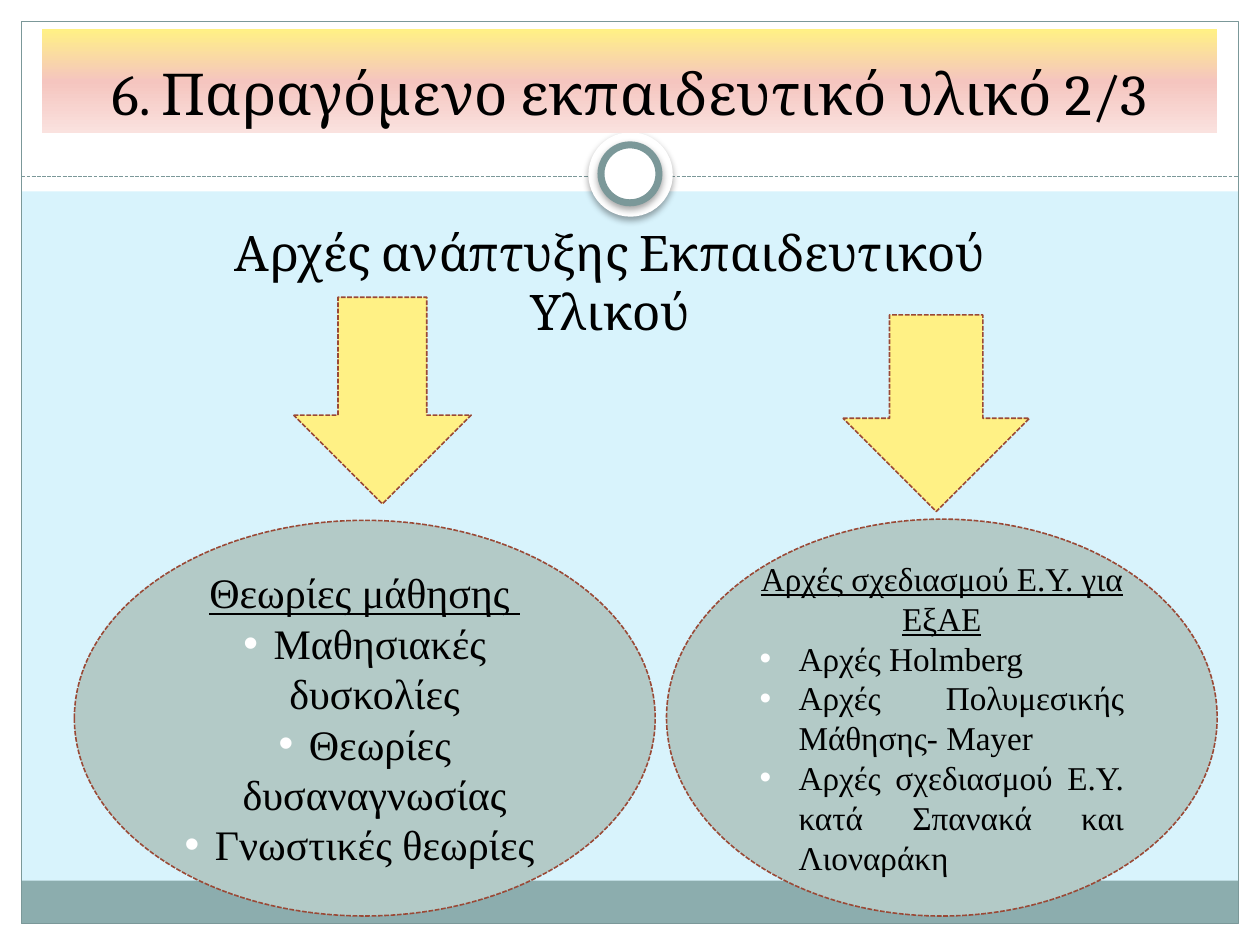
from dataclasses import dataclass

from lxml.etree import SubElement
from pptx import Presentation
from pptx.dml.color import RGBColor
from pptx.enum.dml import MSO_LINE
from pptx.enum.shapes import MSO_CONNECTOR, MSO_SHAPE
from pptx.enum.text import MSO_ANCHOR, MSO_AUTO_SIZE, PP_ALIGN
from pptx.oxml.ns import qn
from pptx.util import Inches, Pt


@dataclass(frozen=True)
class Theme:
    sky: str = "D8F3FC"
    white: str = "FFFFFF"
    black: str = "000000"
    band: str = "8CADAE"
    teal: str = "7B9899"
    yellow: str = "FFF185"
    rust: str = "9A4936"
    sage: str = "B3CAC7"
    fade: tuple = ((0, "FFF185"), (50, "F5C5BF"), (100, "FAE2DF"))
    head: str = "Cambria"
    body: str = "Times New Roman"
    title: int = 33
    lead: int = 28
    large: int = 24
    small: int = 19


class Board:
    """Holds the theme and the current slide."""

    def __init__(self, theme, slide):
        self.theme = theme
        self.slide = slide
        fill = slide.background.fill
        fill.solid()
        fill.fore_color.rgb = RGBColor.from_string(theme.sky)

    def place(self, shape, box):
        shape.left, shape.top, shape.width, shape.height = map(Inches, box)

    def stroke(self, line, color, width, dash=False):
        line.color.rgb = RGBColor.from_string(color)
        line.width = Pt(width)
        if dash:
            line.dash_style = MSO_LINE.SQUARE_DOT

    def shape(self, kind, box, fill=None, line=None, width=0.75, dash=False):
        item = self.slide.shapes.add_shape(kind, *map(Inches, box))
        item.shadow.inherit = False
        if fill:
            item.fill.solid()
            item.fill.fore_color.rgb = RGBColor.from_string(fill)
        else:
            item.fill.background()
        if line:
            self.stroke(item.line, line, width, dash)
        else:
            item.line.fill.background()
        return item

    def rule(self, start, end, color):
        line = self.slide.shapes.add_connector(
            MSO_CONNECTOR.STRAIGHT, *map(Inches, start + end))
        self.stroke(line.line, color, 0.75, True)
        SubElement(line.element.spPr, qn("a:effectLst"))

    def ring(self, box, line=None):
        ring = self.shape(MSO_SHAPE.OVAL, box, self.theme.white, line, 4)
        effect = ring.element.spPr.find(qn("a:effectLst"))
        shade = SubElement(effect, qn("a:outerShdw"), blurRad=str(Pt(4)),
                           dist=str(Pt(2)), dir="5400000", rotWithShape="0")
        color = SubElement(shade, qn("a:srgbClr"), val=self.theme.black)
        SubElement(color, qn("a:alpha"), val="35000")

    def style(self, para, face, size, align=PP_ALIGN.CENTER):
        para.alignment = align
        for run in para.runs:
            run.font.name = face
            run.font.size = Pt(size)
            run.font.color.rgb = RGBColor.from_string(self.theme.black)

    def bullet(self, para, indent):
        props = para._p.get_or_add_pPr()
        props.set("marL", str(Inches(indent)))
        props.set("indent", str(-Inches(indent)))
        color = SubElement(props, qn("a:buClr"))
        SubElement(color, qn("a:srgbClr"), val=self.theme.white)
        SubElement(props, qn("a:buFont"), typeface="Arial")
        SubElement(props, qn("a:buChar"), char="•")

    def title(self, text, box):
        title = self.slide.shapes.title
        title.element.getparent().append(title.element)  # above the backdrop
        self.place(title, box)
        title.fill.gradient()
        title.fill.gradient_angle = 270
        stops = title.element.spPr.find(".//" + qn("a:gsLst"))
        stops.clear()
        for pos, color in self.theme.fade:
            stop = SubElement(stops, qn("a:gs"), pos=str(pos * 1000))
            SubElement(stop, qn("a:srgbClr"), val=color)
        frame = title.text_frame
        frame.text = text
        frame.auto_size = MSO_AUTO_SIZE.NONE
        frame.vertical_anchor = MSO_ANCHOR.BOTTOM
        self.style(frame.paragraphs[0], self.theme.head, self.theme.title)

    def label(self, text, box):
        frame = self.slide.shapes.add_textbox(*map(Inches, box)).text_frame
        frame.word_wrap = True
        frame.text = text
        self.style(frame.paragraphs[0], self.theme.head, self.theme.lead)

    def arrow(self, box):
        self.shape(MSO_SHAPE.DOWN_ARROW, box, self.theme.yellow,
                   self.theme.rust, 0.9, True)

    def bubble(self, box, head, items, size, indent, align):
        oval = self.shape(MSO_SHAPE.OVAL, box, self.theme.sage,
                          self.theme.rust, 0.9, True)
        frame = oval.text_frame
        frame.word_wrap = True
        frame.vertical_anchor = MSO_ANCHOR.MIDDLE
        frame.text = "\n".join([head, *items])
        top, *rest = frame.paragraphs
        self.style(top, self.theme.body, size)
        top.runs[0].font.underline = True
        for para in rest:
            self.style(para, self.theme.body, size, align)
            self.bullet(para, indent)


def main():
    deck = Presentation()
    deck.slide_width, deck.slide_height = Inches(10), Inches(7.5)
    theme = Theme()
    board = Board(theme, deck.slides.add_slide(deck.slide_layouts[5]))

    # White margins, bottom band and frame
    edge = 0.17
    for box in ((0, 7.5 - edge, 10, edge), (0, 0, 10, 1.52),
                (0, 0, edge, 7.5), (10 - edge, 0, edge, 7.5)):
        board.shape(MSO_SHAPE.RECTANGLE, box, theme.white)
    board.shape(MSO_SHAPE.RECTANGLE, (edge, 6.99, 9.66, 0.34), theme.band)
    board.shape(MSO_SHAPE.RECTANGLE, (edge, edge, 9.66, 7.16),
                line=theme.teal)

    # Dashed rule with the ring on it
    board.rule((edge, 1.4), (10 - edge, 1.4), theme.teal)
    board.ring((4.67, 1.05, 0.67, 0.67))
    board.ring((4.77, 1.15, 0.46, 0.46), theme.teal)

    # Headings
    board.title("6. Παραγόμενο εκπαιδευτικό υλικό 2/3",
                (0.33, 0.23, 9.33, 0.83))
    board.label("Αρχές ανάπτυξης Εκπαιδευτικού Υλικού",
                (1.17, 1.72, 7.34, 0.56))

    # Arrows down to the two groups of principles
    board.arrow((2.33, 2.36, 1.41, 1.64))
    board.arrow((6.69, 2.5, 1.48, 1.56))
    board.bubble((0.59, 4.13, 4.61, 3.14), "Θεωρίες μάθησης ",
                 ["Μαθησιακές δυσκολίες ", "Θεωρίες δυσαναγνωσίας ",
                  "Γνωστικές θεωρίες "],
                 theme.large, 0.24, PP_ALIGN.CENTER)
    board.bubble((5.29, 4.12, 4.37, 3.15), "Αρχές σχεδιασμού Ε.Υ. για ΕξΑΕ",
                 ["Αρχές Holmberg", "Αρχές Πολυμεσικής Μάθησης- Mayer",
                  "Αρχές σχεδιασμού Ε.Υ. κατά Σπανακά και Λιοναράκη "],
                 theme.small, 0.31, PP_ALIGN.JUSTIFY)

    deck.save("out.pptx")


if __name__ == "__main__":
    main()
